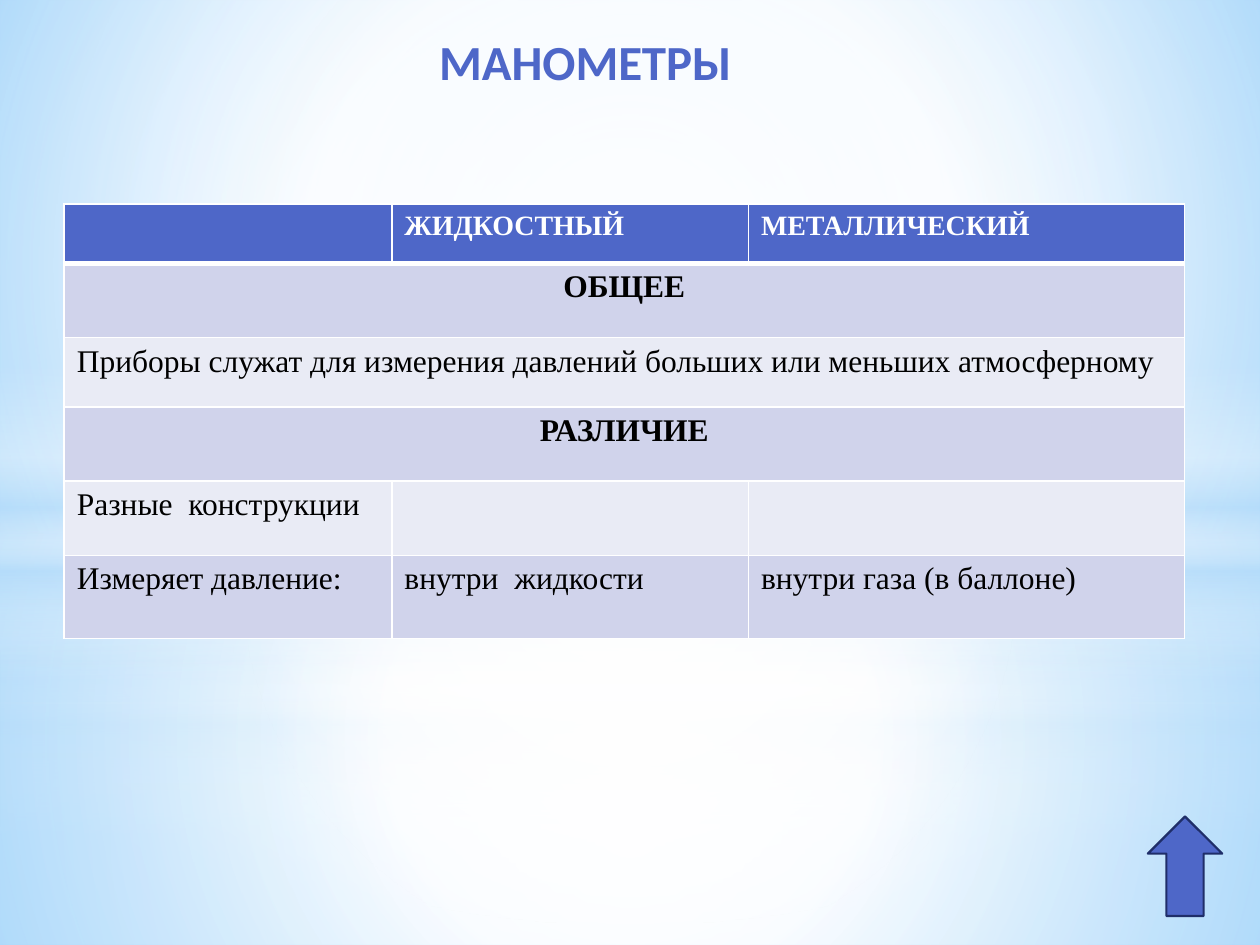
import lxml.etree
import pptx
import pptx.dml.color
import pptx.enum.shapes
import pptx.enum.text
import pptx.oxml
import pptx.oxml.ns
import pptx.util

Inches, Pt = pptx.util.Inches, pptx.util.Pt
RGBColor = pptx.dml.color.RGBColor
SHAPES = pptx.enum.shapes.MSO_SHAPE
CENTER = pptx.enum.text.PP_ALIGN.CENTER
qn = pptx.oxml.ns.qn

INDIGO = RGBColor(0x4E, 0x67, 0xC8)
NAVY = RGBColor(0x1F, 0x2E, 0x69)
BAND_DARK = RGBColor(0xD0, 0xD3, 0xEB)
BAND_LIGHT = RGBColor(0xE9, 0xEB, 0xF5)
WHITE = RGBColor(0xFF, 0xFF, 0xFF)
BLACK = RGBColor(0, 0, 0)
PALE_BLUE = RGBColor(0xB4, 0xDC, 0xFA)
SKY = RGBColor(0x9E, 0xD5, 0xFF)
BLUE = RGBColor(0x5B, 0xB9, 0xFF)

# Content: a row with a single entry spans the whole table
TITLE = "МАНОМЕТРЫ"
ROWS = [
    ["", "ЖИДКОСТНЫЙ", "МЕТАЛЛИЧЕСКИЙ"],
    ["ОБЩЕЕ"],
    ["Приборы служат для измерения давлений больших или меньших атмосферному"],
    ["РАЗЛИЧИЕ"],
    ["Разные  конструкции", "", ""],
    ["Измеряет давление:", "внутри  жидкости", "внутри газа (в баллоне)"],
]
HEADINGS = ("ОБЩЕЕ", "РАЗЛИЧИЕ")
COLUMN_WIDTHS = [2.6, 2.83, 3.46]
ROW_HEIGHTS = [0.47, 0.59, 0.55, 0.59, 0.59, 0.66]

# Background gradients: stops are (position %, colour, opacity %)
MIDDLE = (50, 50, 50, 50)
BACKDROP = [(0, SKY, 100), (60, WHITE, 100), (100, BLUE, 100)]
BAND = [(0, WHITE, 0), (29, WHITE, 30), (45, PALE_BLUE, 40),
        (55, WHITE, 26), (65, PALE_BLUE, 60), (100, WHITE, 0)]


def glow(middle_stop, *opacities):
    return list(zip((0, middle_stop, 100), (WHITE, WHITE, PALE_BLUE), opacities))


def halo(edge):
    return [(0, WHITE, 100), (edge, WHITE, 0)]


# Layers: (preset, top, height, stops, focus), all as wide as the slide
LAYERS = [
    (SHAPES.RECTANGLE, 5.58, 1.92, glow(37, 91, 76, 79), MIDDLE),
    (SHAPES.RECTANGLE, 0, 5.58, glow(48, 89, 62, 79), MIDDLE),
    (SHAPES.RECTANGLE, 4.12, 2.5, BAND, None),
    (SHAPES.OVAL, 1.75, 5.58, halo(56), MIDDLE),
    (SHAPES.RECTANGLE, 4.23, 3.27, glow(37, 92, 77, 80), MIDDLE),
    (SHAPES.RECTANGLE, 0, 4.23, glow(48, 90, 63, 80), MIDDLE),
    (SHAPES.RECTANGLE, 2.9, 2.5, BAND, None),
    (SHAPES.OVAL, 1.75, 5.58, halo(54), MIDDLE),
]


def set_gradient(properties, stops, focus):
    """Replace the solid fill by a circular gradient, or a vertical one without focus."""
    stop_xml = "".join(
        f'<a:gs pos="{pos * 1000}"><a:srgbClr val="{colour}">'
        f'<a:alpha val="{opacity * 1000}"/></a:srgbClr></a:gs>'
        for pos, colour, opacity in stops)
    if focus:
        sides = " ".join(f'{side}="{share * 1000}"' for side, share in zip("ltrb", focus))
        direction = f'<a:path path="circle"><a:fillToRect {sides}/></a:path>'
    else:
        direction = '<a:lin ang="5400000" scaled="0"/>'
    gradient = pptx.oxml.parse_xml(
        f'<a:gradFill {pptx.oxml.ns.nsdecls("a")} rotWithShape="1">'
        f'<a:gsLst>{stop_xml}</a:gsLst>{direction}</a:gradFill>')
    solid = properties.find(qn("a:solidFill"))
    properties.replace(solid, gradient)


def set_borders(cell, bottom_width, top_width):
    properties = cell._tc.get_or_add_tcPr()
    widths = {"L": 1, "R": 1, "T": top_width, "B": bottom_width}
    for index, (side, width) in enumerate(widths.items()):
        border = lxml.etree.Element(qn(f"a:ln{side}"), w=str(Pt(width)))
        fill = lxml.etree.SubElement(border, qn("a:solidFill"))
        lxml.etree.SubElement(fill, qn("a:srgbClr"), val=str(WHITE))
        properties.insert(index, border)


def format_text(paragraph, font_name, size, colour, bold):
    for run in paragraph.runs:
        run.font.name = font_name
        run.font.size = Pt(size)
        run.font.color.rgb = colour
        run.font.bold = bold


def add_backdrop(slide, slide_width):
    slide.background.fill.solid()
    set_gradient(slide.element.find(".//" + qn("p:bgPr")), BACKDROP, (20, 10, 20, 60))
    for preset, top, height, stops, focus in LAYERS:
        layer = slide.shapes.add_shape(preset, 0, Inches(top), slide_width, Inches(height))
        layer.shadow.inherit = False
        layer.line.fill.background()
        layer.fill.solid()
        set_gradient(layer.element.spPr, stops, focus)


def add_title(slide):
    title = slide.shapes.title
    title.left, title.top = Inches(1.38), Inches(0.21)
    title.width, title.height = Inches(6.53), Inches(0.55)
    title.text_frame.text = TITLE
    heading = title.text_frame.paragraphs[0]
    heading.alignment = CENTER
    format_text(heading, "Calibri", 28, INDIGO, True)
    slide.shapes.element.append(title.element)  # in front of the backdrop


def add_comparison(slide):
    table = slide.shapes.add_table(
        len(ROWS), len(COLUMN_WIDTHS), Inches(0.51), Inches(1.62),
        Inches(sum(COLUMN_WIDTHS)), Inches(sum(ROW_HEIGHTS))).table
    for column, width in zip(table.columns, COLUMN_WIDTHS):
        column.width = Inches(width)
    for r, (texts, height) in enumerate(zip(ROWS, ROW_HEIGHTS)):
        table.rows[r].height = Inches(height)
        header = r == 0
        if len(texts) == 1:
            table.cell(r, 0).merge(table.cell(r, len(COLUMN_WIDTHS) - 1))
        for c in range(len(COLUMN_WIDTHS)):
            cell = table.cell(r, c)
            cell.fill.solid()
            cell.fill.fore_color.rgb = INDIGO if header else (BAND_LIGHT, BAND_DARK)[r % 2]
            set_borders(cell, 3 if header else 1, 3 if r == 1 else 1)
        for c, text in enumerate(texts):
            paragraph = table.cell(r, c).text_frame.paragraphs[0]
            paragraph.text = text
            if text in HEADINGS:
                paragraph.alignment = CENTER
            format_text(paragraph, "Times New Roman", 16 if header else 18,
                        WHITE if header else BLACK, header or text in HEADINGS)


def add_up_arrow(slide):
    arrow = slide.shapes.add_shape(
        SHAPES.UP_ARROW, Inches(9.11), Inches(6.48), Inches(0.59), Inches(0.79))
    arrow.shadow.inherit = False
    arrow.fill.solid()
    arrow.fill.fore_color.rgb = INDIGO
    arrow.line.color.rgb = NAVY
    arrow.line.width = Pt(1.25)


def main():
    deck = pptx.Presentation()
    deck.slide_width, deck.slide_height = Inches(10), Inches(7.5)
    slide = deck.slides.add_slide(deck.slide_layouts[5])
    add_backdrop(slide, deck.slide_width)
    add_title(slide)
    add_comparison(slide)
    add_up_arrow(slide)
    deck.save("out.pptx")


if __name__ == "__main__":
    main()
